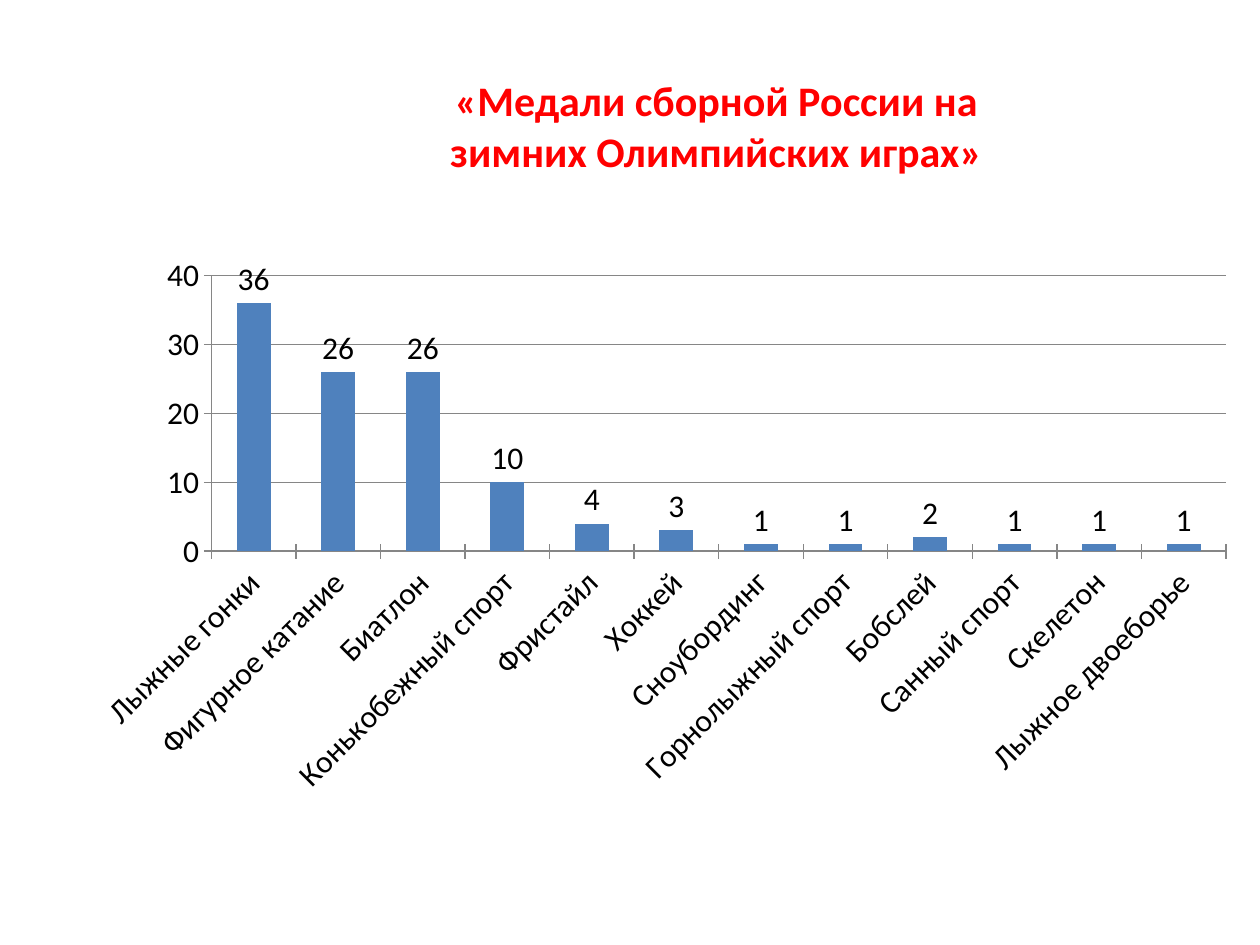
from dataclasses import dataclass

from lxml.etree import SubElement
from pptx import Presentation
from pptx.chart.data import CategoryChartData
from pptx.dml.color import RGBColor as Rgb
from pptx.enum.chart import XL_CHART_TYPE as ChartType, XL_LABEL_POSITION as LabelPos, XL_TICK_MARK as Tick
from pptx.enum.text import MSO_ANCHOR as Anchor, MSO_AUTO_SIZE as AutoSize, PP_ALIGN as Align
from pptx.oxml.ns import qn
from pptx.util import Inches, Pt


@dataclass(frozen=True)
class Theme:
    """Colours, font and type sizes of the slide."""
    font: str = "Calibri"
    heading: Rgb = Rgb(0xFF, 0x00, 0x00)
    text: Rgb = Rgb(0x00, 0x00, 0x00)
    bar: Rgb = Rgb(0x4F, 0x81, 0xBD)
    rule: Rgb = Rgb(0x86, 0x86, 0x86)
    heading_size: Pt = Pt(24)
    chart_size: Pt = Pt(18)


THEME = Theme()
WIDTH, HEIGHT = Inches(10), Inches(7.5)
HEADING = ["«Медали сборной России на", "зимних Олимпийских играх»"]
MEDALS = {
    "Лыжные гонки": 36,
    "Фигурное катание": 26,
    "Биатлон": 26,
    "Конькобежный спорт": 10,
    "Фристайл": 4,
    "Хоккей": 3,
    "Сноубординг": 1,
    "Горнолыжный спорт": 1,
    "Бобслей": 2,
    "Санный спорт": 1,
    "Скелетон": 1,
    "Лыжное двоеборье": 1,
}


def share(left, top, width, height):
    """Turn shares of the slide's size into a box."""
    return [round(part * side) for part, side in
            zip((left, top, width, height), (WIDTH, HEIGHT) * 2)]


def place_heading(title, box):
    """Fit the title placeholder into the box and format its lines."""
    title.left, title.top, title.width, title.height = box
    frame = title.text_frame
    frame.text = "\n".join(HEADING)
    frame.word_wrap = True
    frame.auto_size = AutoSize.NONE
    frame.vertical_anchor = Anchor.MIDDLE
    for line in frame.paragraphs:
        line.alignment = Align.CENTER
        font = line.runs[0].font
        font.name, font.size, font.bold = THEME.font, THEME.heading_size, True
        font.color.rgb = THEME.heading


def fix_plot_area(chart, **shares):
    """Pin the inner plot area to shares of the chart's size."""
    plot_area = chart._chartSpace.chart.plotArea
    for automatic in plot_area.findall(qn("c:layout")):
        plot_area.remove(automatic)
    layout = SubElement(plot_area, qn("c:layout"))
    plot_area.insert(0, layout)
    manual = SubElement(layout, qn("c:manualLayout"))
    settings = {"layoutTarget": "inner", "xMode": "edge", "yMode": "edge", **shares}
    for tag, setting in settings.items():
        SubElement(manual, qn(f"c:{tag}")).set("val", str(setting))


def place_medal_chart(slide, box):
    """Draw the medals by sport as columns in the box."""
    medals = CategoryChartData()
    medals.categories = MEDALS.keys()
    medals.add_series("Series 1", MEDALS.values())
    chart = slide.shapes.add_chart(ChartType.COLUMN_CLUSTERED, *box, medals).chart
    chart.has_title = chart.has_legend = False
    chart.font.name, chart.font.size = THEME.font, THEME.chart_size
    chart.font.color.rgb = THEME.text
    fix_plot_area(chart, x=0.152, y=0.184, w=0.845, h=0.361)

    for axis in (chart.category_axis, chart.value_axis):
        axis.major_tick_mark = Tick.CROSS
        axis.format.line.color.rgb = THEME.rule
    scale = chart.value_axis
    scale.minimum_scale, scale.maximum_scale, scale.major_unit = 0, 40, 10
    scale.major_gridlines.format.line.color.rgb = THEME.rule
    sports_text = chart.category_axis.tick_labels.font
    sports_text.size = THEME.chart_size
    chart.category_axis._element.find(qn("c:txPr")).find(qn("a:bodyPr")).set("rot", "-2700000")

    columns = chart.plots[0]
    columns.gap_width = 150
    columns.vary_by_categories = False
    fill = columns.series[0].format.fill
    fill.solid()
    fill.fore_color.rgb = THEME.bar
    labels = columns.series[0].data_labels
    labels.show_value = True
    labels.position = LabelPos.OUTSIDE_END


def main():
    """Build the slide and save it."""
    deck = Presentation()
    deck.slide_width, deck.slide_height = WIDTH, HEIGHT
    slide = deck.slides.add_slide(deck.slide_layouts[5])
    place_heading(slide.shapes.title, share(0.125, 0.04, 0.887, 0.185))
    place_medal_chart(slide, share(0.023, 0.143, 0.953, 0.808))
    deck.save("out.pptx")


if __name__ == "__main__":
    main()
